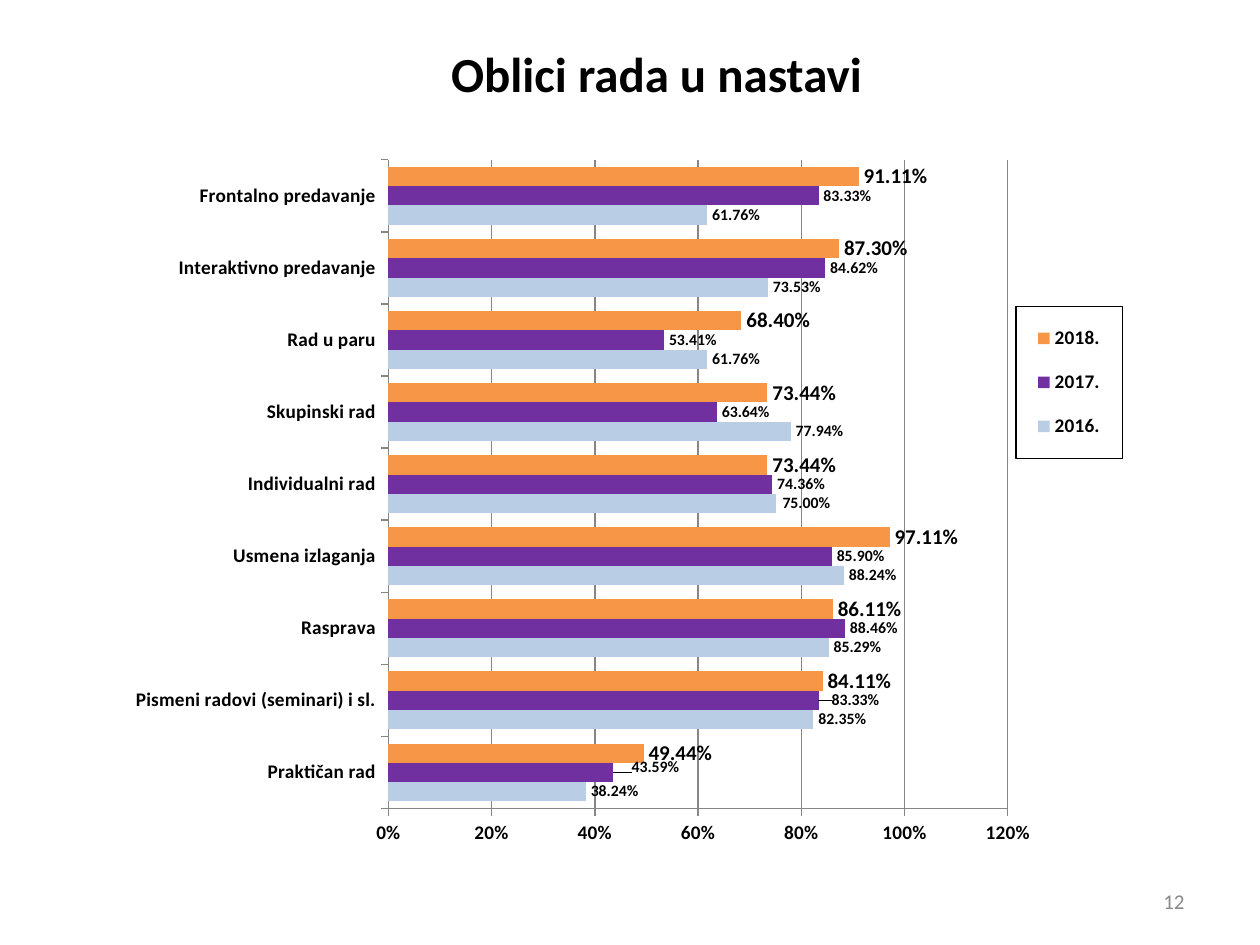
from lxml.etree import SubElement
from pptx import Presentation
from pptx.chart.data import CategoryChartData
from pptx.dml.color import RGBColor
from pptx.enum.chart import (XL_CHART_TYPE as Kind, XL_LABEL_POSITION as Spot,
                             XL_LEGEND_POSITION as Side, XL_TICK_MARK as Tick)
from pptx.enum.text import MSO_ANCHOR as Anchor, PP_ALIGN as Align
from pptx.oxml.ns import qn
from pptx.util import Inches, Pt

BLACK = RGBColor(0, 0, 0)
WHITE = RGBColor(255, 255, 255)
GRAY = RGBColor(0x89, 0x89, 0x89)
LINE = RGBColor(0x86, 0x86, 0x86)
BLUE = RGBColor(0xB9, 0xCD, 0xE5)
PURPLE = RGBColor(0x70, 0x30, 0xA0)
ORANGE = RGBColor(0xF7, 0x96, 0x46)
FACE = "Calibri"
PERCENT = "0.00%"

TITLE = "Oblici rada u nastavi"
NUMBER = "12"
ROWS = [
    ("Praktičan rad", 38.24, 43.59, 49.44),
    ("Pismeni radovi (seminari) i sl.", 82.35, 83.33, 84.11),
    ("Rasprava", 85.29, 88.46, 86.11),
    ("Usmena izlaganja", 88.24, 85.90, 97.11),
    ("Individualni rad", 75.00, 74.36, 73.44),
    ("Skupinski rad", 77.94, 63.64, 73.44),
    ("Rad u paru", 61.76, 53.41, 68.40),
    ("Interaktivno predavanje", 73.53, 84.62, 87.30),
    ("Frontalno predavanje", 61.76, 83.33, 91.11),
]
YEARS = [
    ("2016.", BLUE, 9, {4: (0.002, 0)}),
    ("2017.", PURPLE, 9, {0: (0.013, -0.007), 1: (0.008, 0)}),
    ("2018.", ORANGE, 12, {}),
]
PLOT = {"x": 0.267, "y": 0.021, "w": 0.607, "h": 0.908}
KEY = {"x": 0.882, "y": 0.226, "w": 0.104, "h": 0.213}


def style(font, size, bold=True, color=BLACK):
    """Set face, size, weight and colour of a font."""
    font.name, font.size, font.bold = FACE, Pt(size), bold
    font.color.rgb = color


def write(shape, text, size, bold, color, align):
    """Put one styled run in a shape."""
    frame = shape.text_frame
    frame.word_wrap = True
    frame.vertical_anchor = Anchor.MIDDLE
    para = frame.paragraphs[0]
    para.alignment = align
    run = para.add_run()
    run.text = text
    style(run.font, size, bold, color)


def arrange(node, box, after, inner=False):
    """Give a chart part a manual layout placed after a given child."""
    for old in node.findall(qn("c:layout")):
        node.remove(old)
    layout = SubElement(node, qn("c:layout"))
    manual = SubElement(layout, qn("c:manualLayout"))
    if inner:
        SubElement(manual, qn("c:layoutTarget")).set("val", "inner")
    if "w" in box:
        for axis in "xy":
            SubElement(manual, qn(f"c:{axis}Mode")).set("val", "edge")
    for key, share in box.items():
        SubElement(manual, qn(f"c:{key}")).set("val", str(share))
    if after:
        node.find(qn(after)).addnext(layout)
    else:
        node.insert(0, layout)
    return layout


def label(series, size, moves):
    """Show bold percentages and shift the chosen ones."""
    labels = series.data_labels
    labels.show_value = True
    labels.number_format, labels.number_format_is_linked = PERCENT, False
    labels.position = Spot.OUTSIDE_END
    style(labels.font, size)
    for idx, (dx, dy) in moves.items():
        one = series.points[idx].data_label
        style(one.font, size)
        one.position = Spot.OUTSIDE_END
        node = next(n for n in series.data_labels._element.findall(qn("c:dLbl"))
                    if n.find(qn("c:idx")).get("val") == str(idx))
        layout = arrange(node, {"x": dx, "y": dy}, "c:idx")
        form = SubElement(node, qn("c:numFmt"))
        form.set("formatCode", PERCENT)
        form.set("sourceLinked", "0")
        layout.addnext(form)


def draw(slide):
    """Add the bar chart."""
    data = CategoryChartData(number_format=PERCENT)
    names, *columns = zip(*ROWS)
    data.categories = names
    for (year, *_), column in zip(YEARS, columns):
        data.add_series(year, [round(v / 100, 4) for v in column])
    chart = slide.shapes.add_chart(
        Kind.BAR_CLUSTERED, Inches(0.92), Inches(1.15),
        Inches(8.1), Inches(5.67), data).chart
    style(chart.font, 10, False)
    chart.has_title = False
    plot = chart.plots[0]
    plot.gap_width, plot.overlap = 75, 0
    plot.vary_by_categories = False
    for series, (_, color, size, moves) in zip(plot.series, YEARS):
        series.format.fill.solid()
        series.format.fill.fore_color.rgb = color
        series.invert_if_negative = False
        label(series, size, moves)
    for axis in (chart.category_axis, chart.value_axis):
        style(axis.tick_labels.font, 11)
        axis.major_tick_mark = Tick.OUTSIDE
        axis.format.line.color.rgb = LINE
    values = chart.value_axis
    values.minimum_scale, values.maximum_scale, values.major_unit = 0, 1.2, 0.2
    values.tick_labels.number_format = "0%"
    values.tick_labels.number_format_is_linked = False
    values.major_gridlines.format.line.color.rgb = LINE
    chart.has_legend = True
    legend = chart.legend
    legend.position, legend.include_in_layout = Side.RIGHT, False
    style(legend.font, 11)
    arrange(legend._element, KEY, "c:legendPos")
    frame = SubElement(legend._element, qn("c:spPr"))
    edge = SubElement(frame, qn("a:ln"), w=str(Pt(0.75)))
    fill = SubElement(edge, qn("a:solidFill"))
    SubElement(fill, qn("a:srgbClr"), val=str(BLACK))
    legend._element.find(qn("c:txPr")).addprevious(frame)
    arrange(plot._element.getparent(), PLOT, None, True)


def main():
    """Build the slide."""
    deck = Presentation()
    deck.slide_width, deck.slide_height = Inches(10), Inches(7.5)
    slide = deck.slides.add_slide(deck.slide_layouts[5])
    title = slide.shapes.title
    title.left, title.top = Inches(0.92), Inches(0.29)
    title.width, title.height = Inches(8.58), Inches(0.57)
    title.fill.solid()
    title.fill.fore_color.rgb = WHITE
    write(title, TITLE, 28, True, BLACK, Align.CENTER)
    page = slide.shapes.add_textbox(
        Inches(7.17), Inches(6.95), Inches(2.33), Inches(0.4))
    write(page, NUMBER, 12, False, GRAY, Align.RIGHT)
    draw(slide)
    deck.save("out.pptx")


if __name__ == "__main__":
    main()
